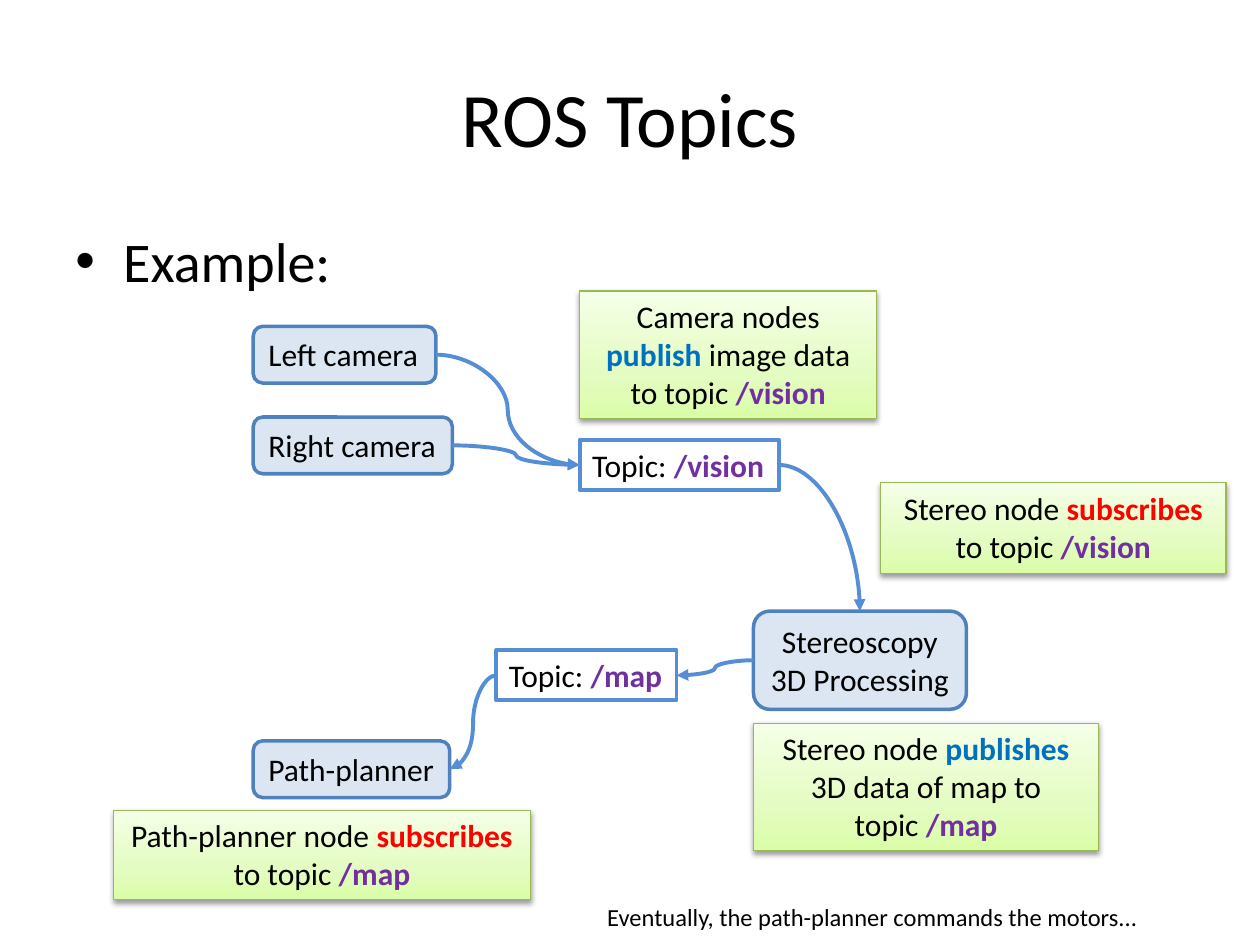
from dataclasses import dataclass

from lxml import etree
from pptx import Presentation
from pptx.dml.color import RGBColor
from pptx.enum.shapes import MSO_CONNECTOR, MSO_SHAPE
from pptx.enum.text import MSO_ANCHOR, MSO_AUTO_SIZE, PP_ALIGN
from pptx.oxml.ns import qn
from pptx.util import Pt

PX = 9144
RECT, ROUND = MSO_SHAPE.RECTANGLE, MSO_SHAPE.ROUNDED_RECTANGLE
CURVE = MSO_CONNECTOR.CURVE
LEFT, MID = PP_ALIGN.LEFT, PP_ALIGN.CENTER
TOP, HALF = MSO_ANCHOR.TOP, MSO_ANCHOR.MIDDLE
GROW = MSO_AUTO_SIZE.SHAPE_TO_FIT_TEXT
SITE = {"top": 0, "left": 1, "right": 3}


@dataclass(frozen=True)
class Theme:
    """Hold the colours, font and sizes of the slide."""
    font: str = "Calibri"
    ink: str = "000000"
    name: str = "7030A0"
    send: str = "0070C0"
    take: str = "FF0000"
    node: str = "DCE6F2"
    edge: str = "4F81BD"
    link: str = "558ED5"
    paper: str = "FFFFFF"
    rim: str = "98B955"
    glow: tuple = ((0, "DAFDA7"), (35, "E4FCC2"), (100, "F5FFE7"))
    title: int = 44
    body: int = 32
    label: int = 18
    small: int = 14


T = Theme()


def rgb(code):
    """Turn a hex code into a colour."""
    return RGBColor.from_string(code)


def place(box, part):
    """Give the EMU frame of a part set within a box."""
    x, y, w, h = part
    return [n * PX for n in (box[0] + x, box[1] + y, w, h)]


def sub(parent, tag, **attrs):
    """Append an XML child with attributes."""
    child = etree.SubElement(parent, qn(tag))
    for key, value in attrs.items():
        child.set(key, str(value))
    return child


def write(shape, lines, size=T.label, align=LEFT, anchor=TOP, wrap=False, grow=True):
    """Write lines of (text, colour) runs, with bold for coloured ones."""
    frame = shape.text_frame
    frame.word_wrap = wrap
    frame.auto_size = GROW if grow else MSO_AUTO_SIZE.NONE
    frame.vertical_anchor = anchor
    for i, runs in enumerate(lines):
        para = frame.add_paragraph() if i else frame.paragraphs[0]
        para.alignment = align
        for text, color in runs:
            run = para.add_run()
            run.text = text
            run.font.name = T.font
            run.font.size = Pt(size)
            run.font.bold = color != T.ink
            run.font.color.rgb = rgb(color)


def block(slide, kind, frame, fill, line, width):
    """Add a flat filled shape with an outline."""
    shape = slide.shapes.add_shape(kind, *frame)
    shape.shadow.inherit = False
    shape.fill.solid()
    shape.fill.fore_color.rgb = rgb(fill)
    shape.line.color.rgb = rgb(line)
    shape.line.width = Pt(width)
    return shape


def head(slide, box):
    """Place the title and the bullet line."""
    title = slide.shapes.add_textbox(*place(box, (0, 0, 900, 125)))
    write(title, [[("ROS Topics", T.ink)]], T.title, MID, HALF, True, False)
    body = slide.shapes.add_textbox(*place(box, (0, 145, 900, 495)))
    write(body, [[("Example:", T.ink)]], T.body, wrap=True, grow=False)
    para = body.text_frame.paragraphs[0]
    para.space_before = Pt(T.body * 0.2)
    props = para._p.get_or_add_pPr()
    props.set("marL", str(38 * PX))
    props.set("indent", str(-38 * PX))
    sub(props, "a:buFont", typeface="Arial")
    sub(props, "a:buChar", char="•")


def join(slide, start, side, end, goal, bend=3):
    """Link two shapes with a curved arrow."""
    wire = slide.shapes.add_connector(CURVE, 0, 0, 0, 0)
    wire.begin_connect(start, SITE[side])
    wire.end_connect(end, SITE[goal])
    wire.line.color.rgb = rgb(T.link)
    wire.line.width = Pt(2.25)
    props = wire._element.spPr
    props.find(qn("a:prstGeom")).set("prst", f"curvedConnector{bend}")
    sub(wire.line._get_or_add_ln(), "a:tailEnd", type="triangle")
    sub(props, "a:effectLst")


def flow(slide, box):
    """Place the nodes, the topics and the arrows between them."""
    nodes = {
        "left": ((0, 0, 145, 45), ["Left camera"], LEFT),
        "right": ((0, 72, 158, 45), ["Right camera"], LEFT),
        "stereo": ((397, 226, 169, 78), ["Stereoscopy", "3D Processing"], MID),
        "plan": ((0, 329, 156, 45), ["Path-planner"], LEFT),
    }
    topics = {"/vision": (259, 90, 158, 40), "/map": (193, 257, 143, 40)}
    parts = {}
    for key, (part, lines, align) in nodes.items():
        parts[key] = block(slide, ROUND, place(box, part), T.node, T.edge, 2)
        write(parts[key], [[(line, T.ink)] for line in lines], align=align)
    for key, part in topics.items():
        parts[key] = block(slide, RECT, place(box, part), T.paper, T.link, 2.25)
        write(parts[key], [[("Topic: ", T.ink), (key, T.name)]])
    for start, side, end, goal, bend in (
        ("left", "right", "/vision", "left", 3),
        ("right", "right", "/vision", "left", 3),
        ("/vision", "right", "stereo", "top", 2),
        ("stereo", "left", "/map", "right", 3),
        ("/map", "left", "plan", "right", 3),
    ):
        join(slide, parts[start], side, parts[end], goal, bend)


def note(slide, frame, runs):
    """Place one green note with a gradient and a soft shadow."""
    shape = block(slide, RECT, frame, T.paper, T.rim, 0.75)
    shape.fill.gradient()
    shape.fill.gradient_angle = 90
    props = shape._element.spPr
    stops = props.find(qn("a:gradFill")).find(qn("a:gsLst"))
    for stop in list(stops):
        stops.remove(stop)
    for pos, color in T.glow:
        sub(sub(stops, "a:gs", pos=pos * 1000), "a:srgbClr", val=color)
    shade = sub(props.find(qn("a:effectLst")), "a:outerShdw", blurRad=40000,
                dist=20000, dir=5400000, rotWithShape=0)
    sub(sub(shade, "a:srgbClr", val=T.ink), "a:alpha", val=38000)
    write(shape, [runs], align=MID, wrap=True)


def notes(slide, box):
    """Place the notes that explain each step."""
    for part, who, verb, color, rest, topic in (
        ((370, 0, 236, 101), "Camera nodes ", "publish ", T.send,
         "image data to topic ", "/vision"),
        ((609, 152, 274, 72), "Stereo node ", "subscribes ", T.take,
         "to topic ", "/vision"),
        ((508, 343, 274, 101), "Stereo node ", "publishes", T.send,
         " 3D data of map to topic ", "/map"),
        ((0, 412, 331, 71), "Path-planner node ", "subscribes ", T.take,
         "to topic ", "/map"),
    ):
        note(slide, place(box, part),
             [(who, T.ink), (verb, color), (rest, T.ink), (topic, T.name)])


def foot(slide, box):
    """Place the closing remark."""
    text = slide.shapes.add_textbox(*place(box, (0, 0, *box[2:])))
    write(text, [[("Eventually, the path-planner commands the motors...", T.ink)]],
          T.small)


def main():
    """Build the slide and save it."""
    deck = Presentation()
    deck.slide_width, deck.slide_height = 1000 * PX, 750 * PX
    slide = deck.slides.add_slide(deck.slide_layouts[6])
    head(slide, (50, 30, 900, 640))
    flow(slide, (201, 259, 566, 374))
    notes(slide, (90, 231, 883, 483))
    foot(slide, (472, 711, 445, 34))
    deck.save("out.pptx")


if __name__ == "__main__":
    main()
